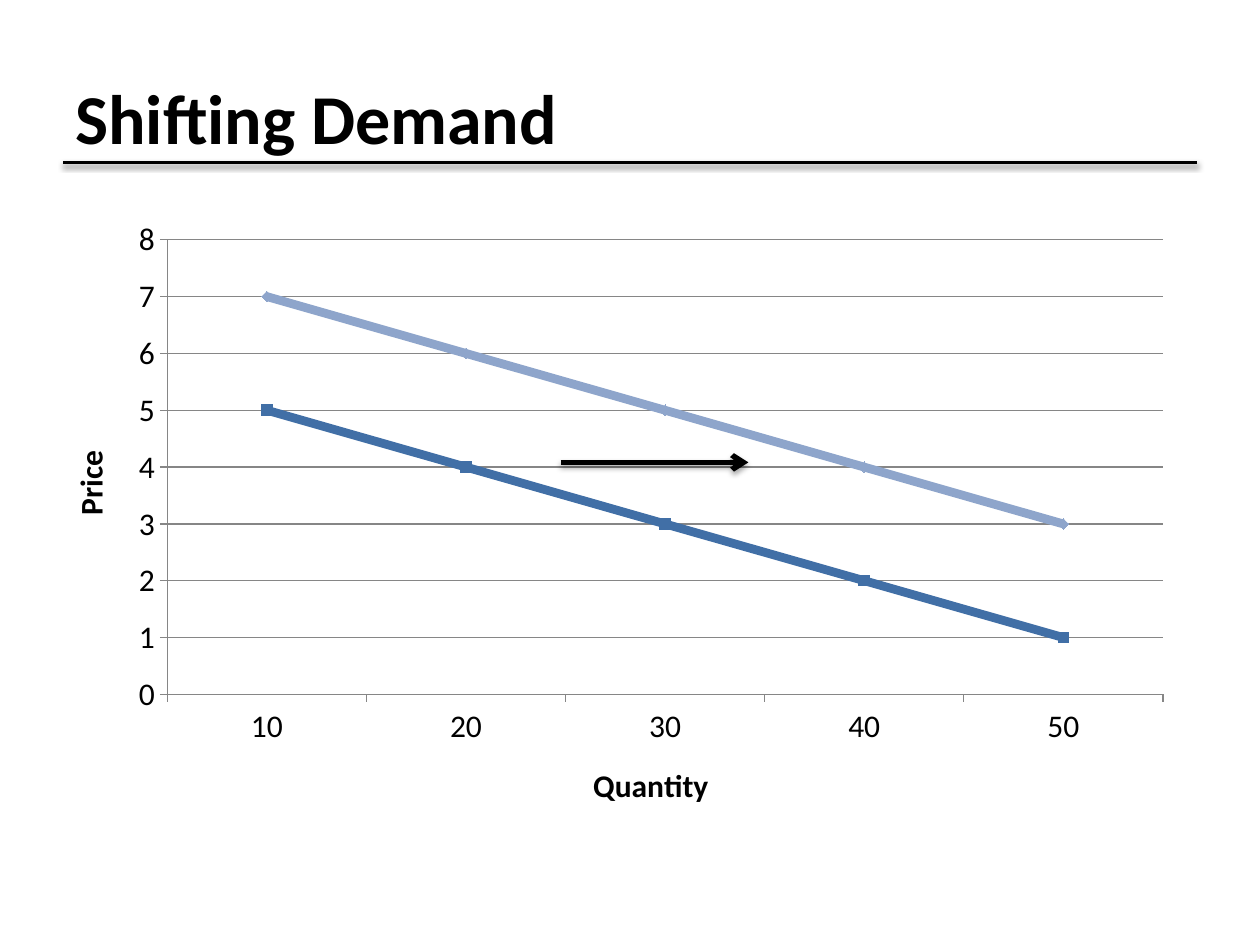
from dataclasses import dataclass

from lxml import etree
from pptx import Presentation
from pptx import util as u
from pptx.chart.data import CategoryChartData
from pptx.dml.color import RGBColor
from pptx.enum import chart as charts, shapes, text
from pptx.oxml import parse_xml
from pptx.oxml.ns import nsdecls, qn

BLACK = RGBColor(0, 0, 0)
GRAY = RGBColor(0x86, 0x86, 0x86)
DARK_BLUE = RGBColor(0x41, 0x6F, 0xA6)
LIGHT_BLUE = RGBColor(0x8E, 0xA5, 0xCB)
FONT = "Calibri"


@dataclass(frozen=True)
class Rule:
    left: float
    right: float
    top: float
    width: float
    shadow_opacity: int
    shadow_distance: float
    arrow: bool = False


@dataclass(frozen=True)
class Demand:
    name: str
    prices: tuple[int, ...]
    color: RGBColor
    marker: charts.XL_MARKER_STYLE
    marker_size: int


QUANTITIES = ("10", "20", "30", "40", "50")
DEMANDS = (
    Demand("Series 1", (5, 4, 3, 2, 1), DARK_BLUE, charts.XL_MARKER_STYLE.SQUARE, 6),
    Demand("Series 2", (7, 6, 5, 4, 3), LIGHT_BLUE, charts.XL_MARKER_STYLE.DIAMOND, 6),
)
TITLE_RULE = Rule(0.5, 9.5, 1.29, 2, 38, 1.6)
SHIFT_ARROW = Rule(4.45, 5.94, 3.67, 3, 35, 1.8, arrow=True)
PLOT_LAYOUT = {"x": 0.092, "y": 0.031, "w": 0.878, "h": 0.729}


def style_font(font, size: float, bold: bool = False) -> None:
    font.name = FONT
    font.size = u.Pt(size)
    font.bold = bold
    font.color.rgb = BLACK


def add_rule(slide, rule: Rule) -> None:
    connector = slide.shapes.add_connector(
        shapes.MSO_CONNECTOR.STRAIGHT,
        u.Inches(rule.left), u.Inches(rule.top), u.Inches(rule.right), u.Inches(rule.top),
    )
    connector.line.color.rgb = BLACK
    connector.line.width = u.Pt(rule.width)
    if rule.arrow:
        etree.SubElement(connector.line._get_or_add_ln(), qn("a:tailEnd"), type="arrow")
    connector._element.spPr.append(parse_xml(
        f'<a:effectLst {nsdecls("a")}><a:outerShdw blurRad="{u.Pt(3.1)}" '
        f'dist="{u.Pt(rule.shadow_distance)}" dir="5400000" rotWithShape="0">'
        f'<a:srgbClr val="{BLACK}"><a:alpha val="{rule.shadow_opacity * 1000}"/></a:srgbClr>'
        "</a:outerShdw></a:effectLst>"
    ))


def add_title(slide, title: str) -> None:
    box = slide.shapes.add_textbox(u.Inches(0.5), u.Inches(0.3), u.Inches(9), u.Inches(1.25))
    frame = box.text_frame
    frame.word_wrap = True
    frame.vertical_anchor = text.MSO_ANCHOR.MIDDLE
    run = frame.paragraphs[0].add_run()
    run.text = title
    style_font(run.font, 40, bold=True)


def style_axis(axis, title: str) -> None:
    run = axis.axis_title.text_frame.paragraphs[0].add_run()
    run.text = title
    style_font(run.font, 18, bold=True)
    style_font(axis.tick_labels.font, 18)
    axis.major_tick_mark = charts.XL_TICK_MARK.OUTSIDE
    axis.minor_tick_mark = charts.XL_TICK_MARK.NONE
    axis.format.line.color.rgb = GRAY
    axis.format.line.width = u.Pt(0.75)


def place_plot(chart) -> None:
    plot_area = chart._chartSpace.chart.plotArea
    for layout in plot_area.findall(qn("c:layout")):
        plot_area.remove(layout)
    modes = '<c:xMode val="edge"/><c:yMode val="edge"/>'
    sizes = "".join(f'<c:{key} val="{value}"/>' for key, value in PLOT_LAYOUT.items())
    plot_area.insert(0, parse_xml(
        f'<c:layout {nsdecls("c")}><c:manualLayout><c:layoutTarget val="inner"/>'
        f"{modes}{sizes}</c:manualLayout></c:layout>"
    ))


def add_demand_chart(slide) -> None:
    data = CategoryChartData()
    data.categories = QUANTITIES
    for demand in DEMANDS:
        data.add_series(demand.name, demand.prices)
    chart = slide.shapes.add_chart(
        charts.XL_CHART_TYPE.LINE_MARKERS,
        u.Inches(0.5), u.Inches(1.75), u.Inches(9), u.Inches(4.95), data,
    ).chart
    style_font(chart.font, 18)
    chart.has_legend = False
    chart.has_title = False
    style_axis(chart.category_axis, "Quantity")
    style_axis(chart.value_axis, "Price")
    chart.value_axis.minimum_scale = 0
    chart.value_axis.maximum_scale = 8
    chart.value_axis.major_unit = 1
    chart.value_axis.has_major_gridlines = True
    gridline = chart.value_axis.major_gridlines.format.line
    gridline.color.rgb = GRAY
    gridline.width = u.Pt(0.75)
    plot = chart.plots[0]
    plot.vary_by_categories = False
    for series, demand in zip(plot.series, DEMANDS):
        series.smooth = False
        series.format.line.color.rgb = demand.color
        series.format.line.width = u.Pt(5)
        series.marker.style = demand.marker
        series.marker.size = demand.marker_size
        series.marker.format.fill.solid()
        series.marker.format.fill.fore_color.rgb = demand.color
        series.marker.format.line.color.rgb = demand.color
    place_plot(chart)


def main() -> None:
    """Build the slide on shifting demand."""
    presentation = Presentation()
    presentation.slide_width = u.Inches(10)
    presentation.slide_height = u.Inches(7.5)
    slide = presentation.slides.add_slide(presentation.slide_layouts[6])
    add_rule(slide, TITLE_RULE)
    add_title(slide, "Shifting Demand")
    add_demand_chart(slide)
    add_rule(slide, SHIFT_ARROW)
    presentation.save("out.pptx")


if __name__ == "__main__":
    main()
